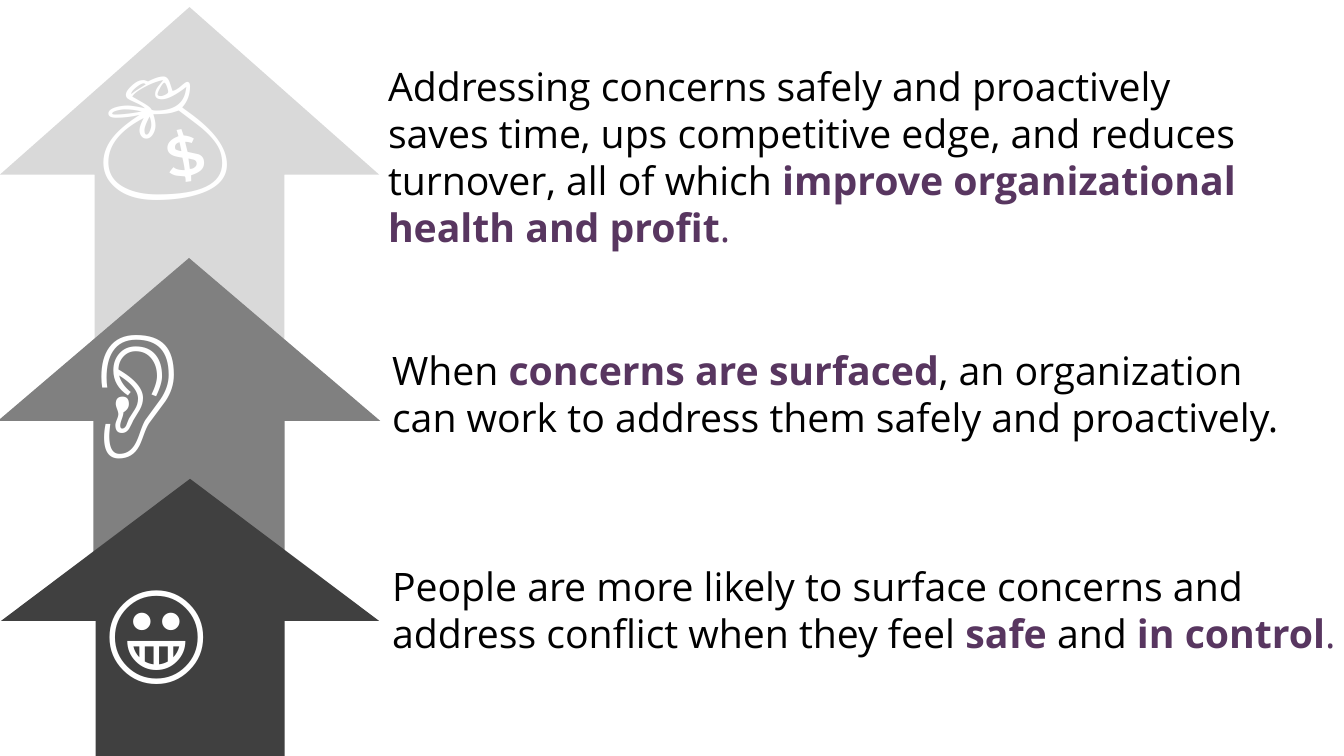
from pptx import Presentation
from pptx.dml.color import RGBColor
from pptx.enum.shapes import MSO_SHAPE
from pptx.enum.text import MSO_AUTO_SIZE
from pptx.util import Inches, Pt

FONT = "Open Sans"
COLORS = {
    "light": "D9D9D9", "middle": "808080", "dark": "404040",
    "icon": "FFFFFF", "body": "000000", "accent": "583660",
}

# Boxes are (left, top, width, height) in inches
# Arrows: box, share of the height taken by the head, colour
ARROWS = [
    ((0, 0.07, 3.76, 3.29), 0.505, "light"),
    ((-0.02, 2.56, 3.79, 3.23), 0.5, "middle"),
    ((0.01, 4.75, 3.75, 2.82), 0.5, "dark"),
]

# Icons: box, wrapping, runs of (text, size)
ICONS = [
    ((0.95, 5.37, 1.55, 1.58), True, [("😀", 80), (" ", 88)]),
    ((0.86, 2.94, 2.05, 1.72), False, [("👂", 96)]),
    ((0.88, 0.38, 1.67, 1.72), True, [("💰", 96)]),
]

# Statements: box, runs of (text, colour, bold)
STATEMENTS = [
    ((3.79, 5.53, 9.65, 1.51), [
        ("People are more likely to surface concerns and address conflict "
         "when they feel ", "body", False),
        ("safe ", "accent", True),
        ("and ", "body", False),
        ("in control", "accent", True),
        (".", "accent", False),
    ]),
    ((3.79, 3.39, 9.02, 1.51), [
        ("When ", "body", False),
        ("concerns are surfaced", "accent", True),
        (", an organization can work to address them safely and proactively.",
         "body", False),
    ]),
    ((3.75, 0.57, 8.88, 1.99), [
        ("Addressing concerns safely and proactively saves time, ups "
         "competitive edge, and reduces turnover, all of which ",
         "body", False),
        ("improve organizational health and profit", "accent", True),
        (".", "accent", False),
    ]),
]


def add_arrow(slide, box, head, color):
    arrow = slide.shapes.add_shape(MSO_SHAPE.UP_ARROW, *map(Inches, box))
    arrow.adjustments[0] = 0.5
    arrow.adjustments[1] = head
    arrow.shadow.inherit = False
    arrow.fill.solid()
    arrow.fill.fore_color.rgb = RGBColor.from_string(COLORS[color])
    arrow.line.fill.background()


def add_text(slide, box, runs, wrap=True):
    """Add a one-paragraph box; runs are (text, format) pairs."""
    frame = slide.shapes.add_textbox(*map(Inches, box)).text_frame
    frame.word_wrap = wrap
    frame.auto_size = MSO_AUTO_SIZE.SHAPE_TO_FIT_TEXT
    for text, style in runs:
        add_run(frame.paragraphs[0], text, **style)


def add_run(paragraph, text, size=28, color="body", bold=False):
    run = paragraph.add_run()
    run.text = text
    run.font.name = FONT
    run.font.size = Pt(size)
    run.font.bold = bold
    run.font.color.rgb = RGBColor.from_string(COLORS[color])


def main():
    deck = Presentation()
    deck.slide_width, deck.slide_height = Inches(13.33), Inches(7.5)
    slide = deck.slides.add_slide(deck.slide_layouts[6])
    for box, head, color in ARROWS:
        add_arrow(slide, box, head, color)
    for box, wrap, icon in ICONS:
        runs = [(text, dict(size=size, color="icon")) for text, size in icon]
        add_text(slide, box, runs, wrap=wrap)
    for box, statement in STATEMENTS:
        runs = [(text, dict(color=color, bold=bold))
                for text, color, bold in statement]
        add_text(slide, box, runs)
    deck.save("out.pptx")


if __name__ == "__main__":
    main()
